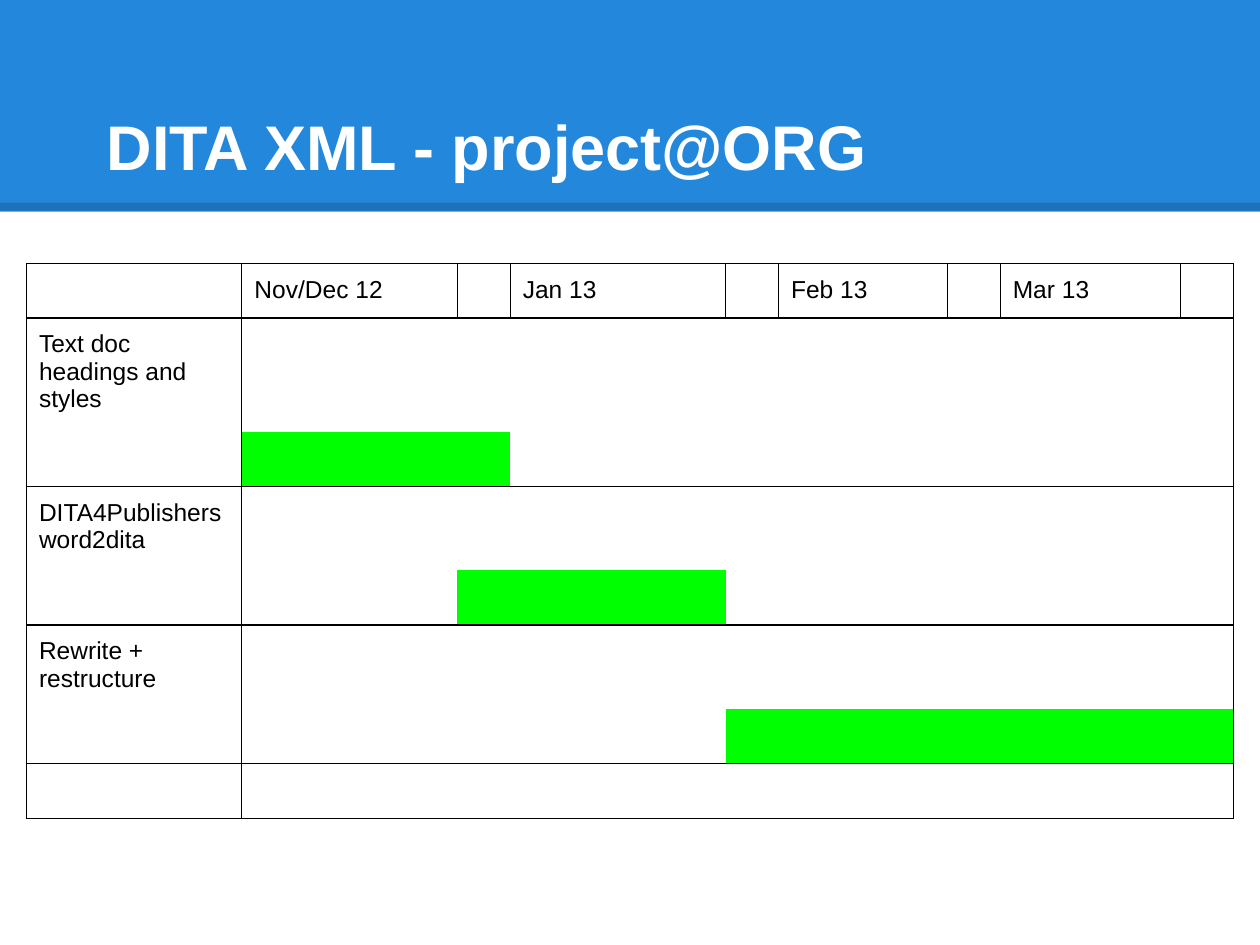
from lxml.etree import SubElement
from pptx import Presentation
from pptx.dml.color import RGBColor
from pptx.enum.shapes import MSO_CONNECTOR, MSO_SHAPE
from pptx.enum.text import MSO_ANCHOR
from pptx.oxml import parse_xml
from pptx.oxml.ns import nsdecls, qn
from pptx.util import Inches, Pt

BLUE = RGBColor(0x23, 0x88, 0xDB)
WHITE = RGBColor(0xFF, 0xFF, 0xFF)
BLACK = RGBColor(0, 0, 0)
GREEN = RGBColor(0, 0xFF, 0)

HEADINGS = ["", "Nov/Dec 12", "", "Jan 13", "", "Feb 13", "", "Mar 13", ""]
COLUMN_WIDTHS = [1.71, 1.71, 0.42, 1.71, 0.42, 1.34, 0.42, 1.43, 0.42]
ROW_HEIGHT = 0.42
TASKS = [
    ("Text doc headings and styles", 0.85, range(1, 3)),
    ("DITA4Publishers word2dita", 0.63, range(2, 4)),
    ("Rewrite + restructure", 0.63, range(4, 9)),
]


def write_text(frame, text, size=14, color=BLACK, bold=False, anchor=MSO_ANCHOR.TOP):
    frame.word_wrap = True
    frame.vertical_anchor = anchor
    frame.margin_left = frame.margin_right = Inches(0.1)
    frame.margin_top = frame.margin_bottom = Inches(0.1)
    paragraph = frame.paragraphs[0]
    paragraph.font.size = Pt(size)
    if text:
        run = paragraph.add_run()
        run.text = text
        run.font.name = "Arial"
        run.font.size = Pt(size)
        run.font.bold = bold
        run.font.color.rgb = color
    else:
        end = SubElement(paragraph._p, qn("a:endParaRPr"))
        end.set("sz", str(size * 100))
    return paragraph


class GanttSlide:
    """Draws the parts of a project timeline slide in one style."""

    def __init__(self, slide):
        self.slide = slide

    def band(self, left, top, width, height):
        band = self.slide.shapes.add_shape(
            MSO_SHAPE.RECTANGLE, Inches(left), Inches(top), Inches(width), Inches(height))
        band.shadow.inherit = False
        band.fill.solid()
        band.fill.fore_color.rgb = BLUE
        band.line.fill.background()

    def rule(self, left, right, y, weight, opacity):
        rule = self.slide.shapes.add_connector(
            MSO_CONNECTOR.STRAIGHT, Inches(left), Inches(y), Inches(right), Inches(y))
        rule.line.width = Pt(weight)
        rule.line.color.rgb = BLACK
        color = rule.line._ln.find(".//" + qn("a:srgbClr"))
        SubElement(color, qn("a:alpha")).set("val", str(opacity * 1000))
        SubElement(rule._element.spPr, qn("a:effectLst"))

    def title(self, text, left, top, width, height):
        box = self.slide.shapes.add_textbox(
            Inches(left), Inches(top), Inches(width), Inches(height))
        paragraph = write_text(box.text_frame, text, size=36, color=WHITE,
                               bold=True, anchor=MSO_ANCHOR.BOTTOM)
        properties = paragraph._p.get_or_add_pPr()
        properties.set("marL", "0")
        properties.set("indent", str(Inches(0.25)))

    def borders(self, cell, sides):
        for position, side in enumerate("LRTB"):
            paint = (f'<a:solidFill><a:srgbClr val="{BLACK}"/></a:solidFill>'
                     if side in sides else "<a:noFill/>")
            border = f'<a:ln{side} {nsdecls("a")} w="{Pt(0.75)}">{paint}</a:ln{side}>'
            cell._tc.get_or_add_tcPr().insert(position, parse_xml(border))

    def cell(self, cell, text, filled, sides):
        write_text(cell.text_frame, text)
        cell.margin_left = cell.margin_right = Inches(0.1)
        cell.margin_top = cell.margin_bottom = Inches(0.1)
        if filled:
            cell.fill.solid()
            cell.fill.fore_color.rgb = GREEN
        else:
            cell.fill.background()
        self.borders(cell, sides)

    def timeline(self, left, top):
        blank = [""] * (len(HEADINGS) - 1)
        rows = [(HEADINGS, ROW_HEIGHT, (), "TB")]
        for task, height, months in TASKS:
            rows.append(([task, *blank], height, (), "T"))
            rows.append((["", *blank], ROW_HEIGHT, months, "B"))
        rows.append((["", *blank], ROW_HEIGHT, (), "TB"))

        table = self.slide.shapes.add_table(
            len(rows), len(HEADINGS), Inches(left), Inches(top),
            Inches(sum(COLUMN_WIDTHS)), Inches(sum(row[1] for row in rows))).table
        table.first_row = table.horz_banding = False
        for column, width in zip(table.columns, COLUMN_WIDTHS):
            column.width = Inches(width)
        last = len(HEADINGS) - 1
        for r, (texts, height, months, horizontal) in enumerate(rows):
            table.rows[r].height = Inches(height)
            for c, text in enumerate(texts):
                sides = horizontal
                if r == 0 or c <= 1:
                    sides += "L"
                if r == 0 or c in (0, last):
                    sides += "R"
                self.cell(table.cell(r, c), text, c in months, sides)


def main():
    presentation = Presentation()
    presentation.slide_width = Inches(10)
    presentation.slide_height = Inches(7.5)
    gantt = GanttSlide(presentation.slides.add_slide(presentation.slide_layouts[6]))
    gantt.band(0, 0, 10, 1.68)
    gantt.rule(0, 10, 1.64, weight=4.5, opacity=15)
    gantt.title("DITA XML - project@ORG", 0.5, 0.3, 9, 1.25)
    gantt.timeline(0.21, 2.09)
    presentation.save("out.pptx")


if __name__ == "__main__":
    main()
